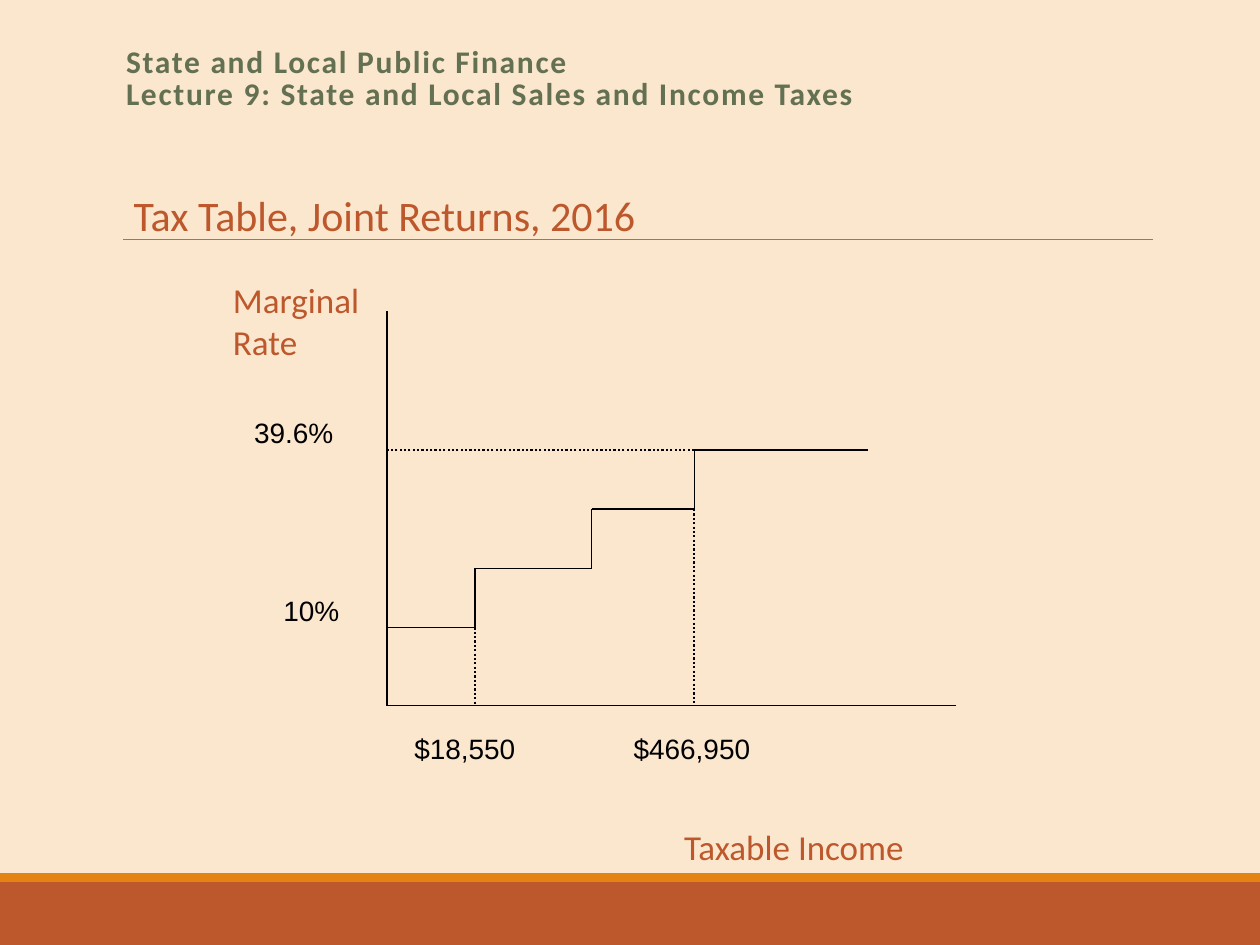
from dataclasses import dataclass
from itertools import pairwise

from lxml import etree
from pptx import Presentation
from pptx.dml.color import RGBColor
from pptx.enum.dml import MSO_LINE
from pptx.enum.shapes import MSO_CONNECTOR, MSO_SHAPE
from pptx.enum.text import MSO_ANCHOR, MSO_AUTO_SIZE, PP_ALIGN
from pptx.oxml.ns import qn
from pptx.util import Pt

RECTANGLE = MSO_SHAPE.RECTANGLE
STRAIGHT = MSO_CONNECTOR.STRAIGHT
DOTTED = MSO_LINE.ROUND_DOT
TOP = MSO_ANCHOR.TOP
NO_FIT = MSO_AUTO_SIZE.NONE
LEFT = PP_ALIGN.LEFT


@dataclass(frozen=True)
class Theme:
    background: str = "FBE6CE"
    rust: str = "BD582C"
    orange: str = "E48312"
    olive: str = "637052"
    gray: str = "808080"
    black: str = "000000"
    text_font: str = "Calibri"
    value_font: str = "Arial"
    heading_size: int = 18
    subject_size: int = 24
    axis_size: int = 20
    value_size: int = 16


def set_values(target, values):
    for name, value in values.items():
        setattr(target, name, value)


class SlideBuilder:
    def __init__(self, page, theme):
        self.page = page
        self.theme = theme
        fill = page.background.fill
        fill.solid()
        fill.fore_color.rgb = RGBColor.from_string(theme.background)

    def bar(self, left, top, width, height, color):
        box = self.page.shapes.add_shape(
            RECTANGLE, Pt(left), Pt(top), Pt(width), Pt(height))
        box.shadow.inherit = False
        box.fill.solid()
        box.fill.fore_color.rgb = RGBColor.from_string(color)
        box.line.fill.background()

    def line(self, start, end, color=None, width=0.75, dash=None):
        connector = self.page.shapes.add_connector(
            STRAIGHT, *[Pt(value) for value in (*start, *end)])
        connector.line.color.rgb = RGBColor.from_string(color or self.theme.black)
        connector.line.width = Pt(width)
        if dash:
            connector.line.dash_style = dash
        etree.SubElement(connector._element.spPr, qn("a:effectLst"))

    def fill_text(self, box, text, font, size, color, bold=False):
        frame = box.text_frame
        frame.text = text
        set_values(frame, {"word_wrap": True, "auto_size": NO_FIT,
                           "vertical_anchor": TOP})
        para = frame.paragraphs[0]
        para.alignment = LEFT
        for span in para.runs:
            set_values(span.font, {"name": font, "size": Pt(size), "bold": bold})
            span.font.color.rgb = RGBColor.from_string(color)
        return para

    def label(self, text, left, top, width, height, font, size, color):
        box = self.page.shapes.add_textbox(
            Pt(left), Pt(top), Pt(width), Pt(height))
        self.fill_text(box, text, font, size, color)

    def axis_label(self, text, left, top, width, height):
        self.label(text, left, top, width, height,
                   self.theme.text_font, self.theme.axis_size, self.theme.rust)

    def value_label(self, text, left, top, width):
        self.label(text, left, top, width, 45,
                   self.theme.value_font, self.theme.value_size, self.theme.black)

    def place(self, box, left, top, width, height):
        set_values(box, {"left": Pt(left), "top": Pt(top),
                         "width": Pt(width), "height": Pt(height)})

    def heading(self, text, *bounds):
        box = self.page.shapes.title
        self.place(box, *bounds)
        para = self.fill_text(box, text, self.theme.text_font,
                              self.theme.heading_size, self.theme.olive, bold=True)
        para.line_spacing = 0.85
        for span in para.runs:
            span.font._element.set("spc", "100")

    def subject(self, text, *bounds):
        box = self.page.placeholders[1]
        self.place(box, *bounds)
        set_values(box.text_frame, {"margin_left": 0, "margin_right": 0})
        para = self.fill_text(box, text, self.theme.text_font,
                              self.theme.subject_size, self.theme.rust)
        set_values(para, {"line_spacing": 0.9, "space_before": Pt(6.8),
                          "space_after": Pt(1.1)})
        properties = para._p.get_or_add_pPr()
        properties.set("marL", str(Pt(4.5)))
        properties.set("indent", str(-Pt(4.5)))
        bullet = etree.Element(qn("a:buNone"))
        properties.find(qn("a:spcAft")).addnext(bullet)


def main():
    deck = Presentation()
    set_values(deck, {"slide_width": Pt(720), "slide_height": Pt(540)})
    theme = Theme()
    page = deck.slides.add_slide(deck.slide_layouts[1])
    slide = SlideBuilder(page, theme)

    # Footer bands and heading rule
    slide.bar(0, 504, 720, 36, theme.rust)
    slide.bar(0, 499, 720, 5, theme.orange)
    slide.line((70.5, 136.8), (658.8, 136.8), theme.gray, 0.5)

    # Headings
    slide.heading("State and Local Public Finance\v"
                  "Lecture 9: State and Local Sales and Income Taxes",
                  64.8, 23.8, 594, 46.8)
    slide.subject("Tax Table, Joint Returns, 2016", 76.3, 108, 364.3, 35.3)

    # Axes
    origin_x, origin_y = 221.2, 403.2
    origin = (origin_x, origin_y)
    slide.line((origin_x, 177.8), origin)
    slide.line(origin, (546.5, origin_y))
    slide.axis_label("Taxable Income", 383.8, 468, 149.8, 45.4)
    slide.axis_label("Marginal Rate", 126, 155.5, 95, 67.7)

    # Rate schedule: equal rises at each bracket limit
    limits = [origin_x, 271.4, 338.2, 396.7, 496]
    lowest_rate, rise = 358.5, 33.8
    corners = []
    for step, (start, end) in enumerate(pairwise(limits)):
        level = lowest_rate - step * rise
        corners += [(start, level), (end, level)]
    for start, end in pairwise(corners):
        slide.line(start, end)

    # Dotted guides to the axes
    first_limit, last_limit = corners[1], corners[5]
    top_rate = corners[6]
    guides = [
        (top_rate, (origin_x, top_rate[1])),
        (first_limit, (first_limit[0], origin_y)),
        (last_limit, (last_limit[0], origin_y)),
    ]
    for start, end in guides:
        slide.line(start, end, width=1.25, dash=DOTTED)

    # Axis values
    for text, left, top, width in [
        ("10%", 154.8, 335.5, 67),
        ("39.6%", 138.2, 234, 75),
        ("$18,550", 229.7, 414.7, 91.4),
        ("$466,950", 355, 414.7, 91.4),
    ]:
        slide.value_label(text, left, top, width)

    deck.save("out.pptx")


if __name__ == "__main__":
    main()
